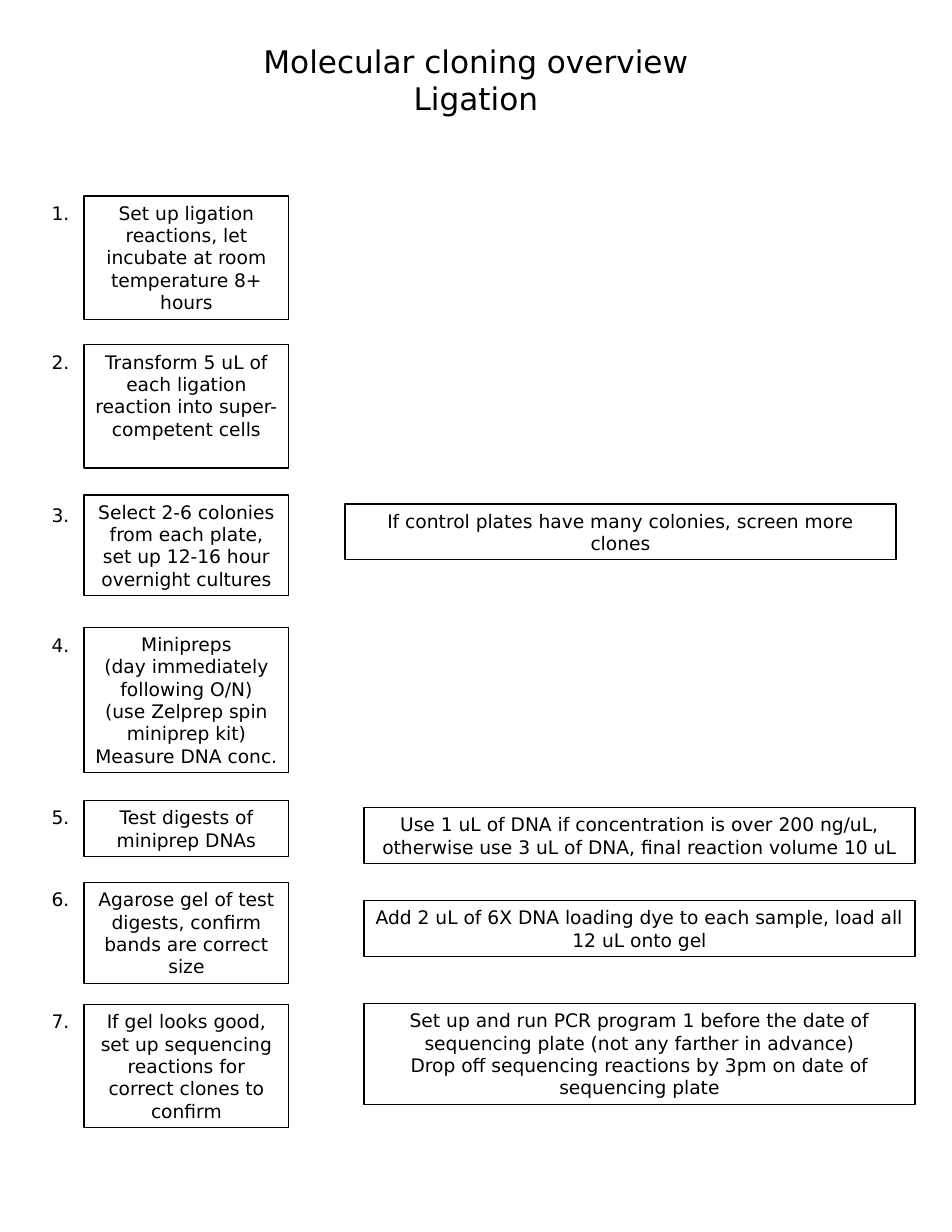
from pptx import Presentation
from pptx.dml.color import RGBColor
from pptx.enum.shapes import MSO_SHAPE
from pptx.enum.text import MSO_ANCHOR, PP_ALIGN
from pptx.util import Inches, Pt

RECTANGLE = MSO_SHAPE.RECTANGLE
TOP = MSO_ANCHOR.TOP
CENTER = PP_ALIGN.CENTER

FONT = "DejaVu Sans"
BLACK, WHITE = "000000", "FFFFFF"
PAGE_W, PAGE_H = 8.5, 11
NUMBER_X, NUMBER_W, NUMBER_H = 0.33, 0.42, 0.3
STEP_W, NOTE_W = 1.83, 4.92
LINE_H, PADDING = 0.2, 0.1

STEPS = [
    (1.75, 0, 5, ["Set up ligation reactions, let incubate at room temperature 8+ hours"]),
    (3.08, 0, 5, ["Transform 5 uL of each ligation reaction into super-competent cells"]),
    (4.42, 0.03, 4, ["Select 2-6 colonies from each plate, set up 12-16 hour overnight cultures"]),
    (5.6, 0.01, 6, ["Minipreps", "(day immediately following O/N)",
                    "(use Zelprep spin miniprep kit)", "Measure DNA conc."]),
    (7.15, 0, 2, ["Test digests of miniprep DNAs"]),
    (7.88, 0, 4, ["Agarose gel of test digests, confirm bands are correct size"]),
    (8.97, 0, 5, ["If gel looks good, set up sequencing reactions for correct clones to confirm"]),
]

NOTES = [
    (3.08, 4.5, 2, ["If control plates have many colonies, screen more clones"]),
    (3.25, 7.21, 2, ["Use 1 uL of DNA if concentration is over 200 ng/uL, "
                     "otherwise use 3 uL of DNA, final reaction volume 10 uL"]),
    (3.25, 8.04, 2, ["Add 2 uL of 6X DNA loading dye to each sample, load all 12 uL onto gel"]),
    (3.25, 8.96, 4, ["Set up and run PCR program 1 before the date of sequencing plate "
                     "(not any farther in advance)",
                     "Drop off sequencing reactions by 3pm on date of sequencing plate"]),
]


def color(hex_string):
    return RGBColor.from_string(hex_string)


def box_height(lines):
    return lines * LINE_H + PADDING


def write(frame, paragraphs, size):
    frame.word_wrap = True
    frame.vertical_anchor = TOP
    for index, words in enumerate(paragraphs):
        paragraph = frame.paragraphs[0] if index == 0 else frame.add_paragraph()
        paragraph.alignment = CENTER
        run = paragraph.add_run()
        run.text = words
        run.font.name = FONT
        run.font.size = Pt(size)
        run.font.color.rgb = color(BLACK)


def add_box(shapes, box, paragraphs, outline=BLACK):
    panel = shapes.add_shape(RECTANGLE, *map(Inches, box))
    panel.shadow.inherit = False
    panel.fill.background()
    panel.line.color.rgb = color(outline)
    panel.line.width = Pt(0.75)
    write(panel.text_frame, paragraphs, 12)


def add_title(slide, box):
    title = slide.shapes.add_textbox(*map(Inches, box))
    write(title.text_frame, ["Molecular cloning overview", "Ligation"], 20)


def add_step(slide, box, number, number_drop, paragraphs):
    left, top, width, height = box
    step = slide.shapes.add_group_shape().shapes
    add_box(step, (left, top + number_drop, NUMBER_W, NUMBER_H), [f"{number}."], WHITE)
    add_box(step, (left + NUMBER_W, top, width - NUMBER_W, height), paragraphs)


def main():
    deck = Presentation()
    deck.slide_width, deck.slide_height = Inches(PAGE_W), Inches(PAGE_H)
    slide = deck.slides.add_slide(deck.slide_layouts[6])
    add_title(slide, (0, 0.33, PAGE_W, 1.11))
    for number, (top, drop, lines, paragraphs) in enumerate(STEPS, 1):
        box = (NUMBER_X, top, NUMBER_W + STEP_W, box_height(lines))
        add_step(slide, box, number, drop, paragraphs)
    for left, top, lines, paragraphs in NOTES:
        add_box(slide.shapes, (left, top, NOTE_W, box_height(lines)), paragraphs)
    deck.save("out.pptx")


if __name__ == "__main__":
    main()
